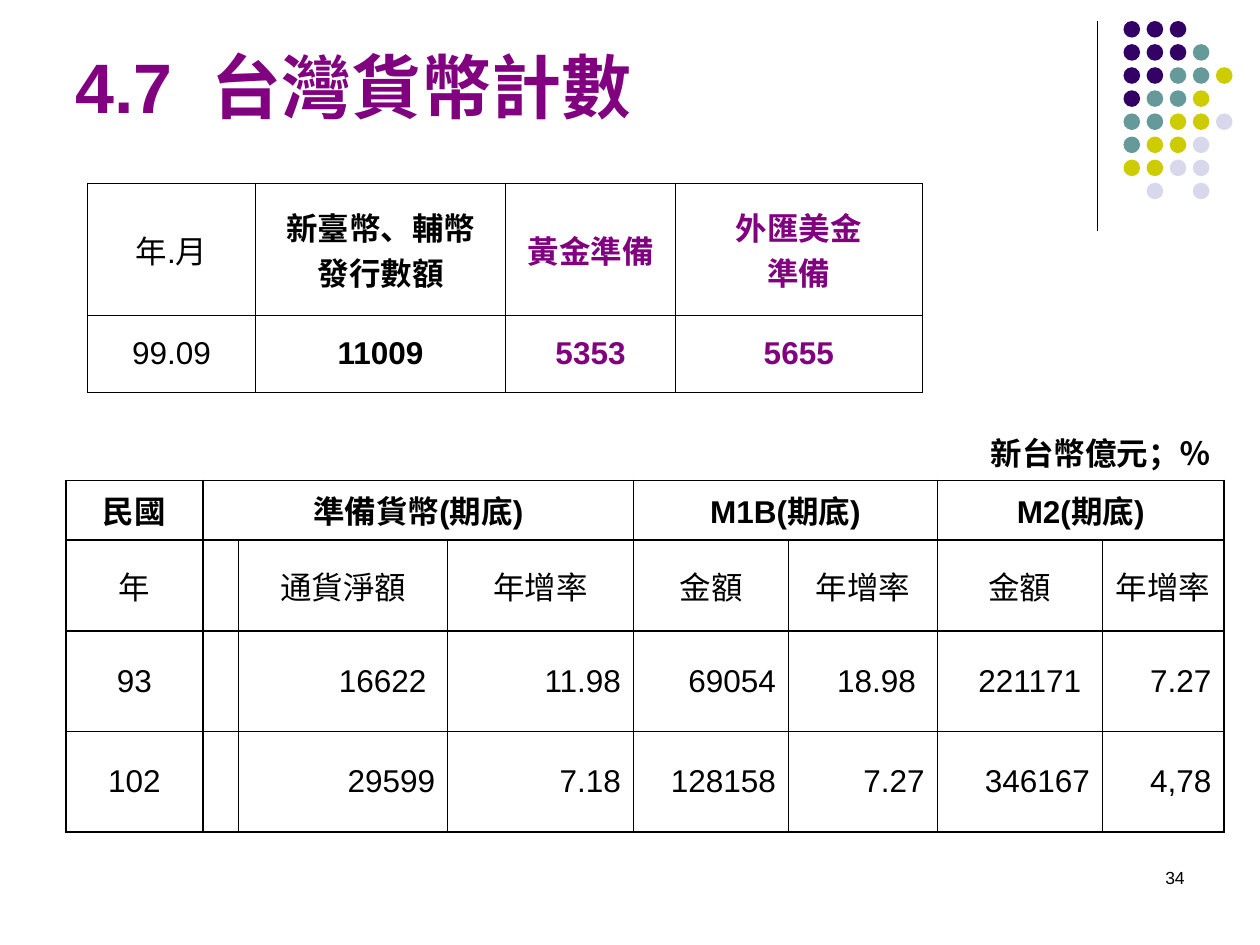
from dataclasses import dataclass

from lxml.etree import SubElement
from pptx import Presentation
from pptx.dml.color import RGBColor
from pptx.enum.shapes import MSO_CONNECTOR as Link, MSO_SHAPE as Form
from pptx.enum.text import MSO_ANCHOR as Anchor, MSO_AUTO_SIZE as Fit, PP_ALIGN as Align
from pptx.oxml.ns import qn
from pptx.util import Pt

BLACK = RGBColor(0x00, 0x00, 0x00)
PURPLE = RGBColor(0x80, 0x00, 0x80)
INDIGO = RGBColor(0x33, 0x00, 0x66)
TEAL = RGBColor(0x66, 0x99, 0x99)
LIME = RGBColor(0xCC, 0xCC, 0x00)
LILAC = RGBColor(0xD8, 0xD8, 0xEC)

FONT = "Arial"
SIDES = ("L", "R", "T", "B")
HUES = {"i": INDIGO, "t": TEAL, "l": LIME, "p": LILAC}
DOTS = ("iii", "iiit", "iittl", "ittl", "ttllp", "tllp", "llpp", " p p")


@dataclass
class Style:
    size: float = 18
    color: RGBColor = BLACK
    bold: bool = False
    align: Align = Align.CENTER
    hang: float = 0


@dataclass
class Grid:
    left: float
    top: float
    cols: tuple[float, ...]
    rows: tuple[float, ...]
    texts: tuple[tuple[str, ...], ...]
    line: float
    spans: tuple[tuple[int, int, int], ...] = ()  # row, first column, last column


def write(frame, text: str, style: Style) -> None:
    frame.text = text
    for para in frame.paragraphs:
        para.alignment = style.align
        if style.hang:
            props = para._p.get_or_add_pPr()
            props.set("marL", str(Pt(style.hang)))
            props.set("indent", str(-Pt(style.hang)))
        for run in para.runs:
            font = run.font
            font.name, font.size, font.bold = FONT, Pt(style.size), style.bold
            font.color.rgb = style.color


def border(cell, width: float, shown: str) -> None:
    props = cell._tc.get_or_add_tcPr()
    for side in SIDES:
        line = SubElement(props, qn(f"a:ln{side}"), w=str(Pt(width)))
        if side in shown:
            fill = SubElement(line, qn("a:solidFill"))
            SubElement(fill, qn("a:srgbClr"), val=str(BLACK))
        else:
            SubElement(line, qn("a:noFill"))


def draw_grid(slide, grid: Grid, style_of, sides_of) -> None:
    table = slide.shapes.add_table(
        len(grid.rows), len(grid.cols), Pt(grid.left), Pt(grid.top),
        Pt(sum(grid.cols)), Pt(sum(grid.rows))).table
    table.first_row = table.horz_banding = False
    for col, width in zip(table.columns, grid.cols):
        col.width = Pt(width)
    for row, height in zip(table.rows, grid.rows):
        row.height = Pt(height)
    for r, texts in enumerate(grid.texts):
        for c, text in enumerate(texts):
            cell = table.cell(r, c)
            cell.vertical_anchor = Anchor.MIDDLE
            border(cell, grid.line, sides_of(r))
            cell.fill.background()
            if text:
                write(cell.text_frame, text, style_of(r, c))
    for r, first, last in grid.spans:
        table.cell(r, first).merge(table.cell(r, last))


def draw_dots(slide, left: float, top: float, size: float, step: float) -> None:
    for r, row in enumerate(DOTS):
        for c, key in enumerate(row):
            if key == " ":
                continue
            dot = slide.shapes.add_shape(
                Form.OVAL, Pt(left + c * step), Pt(top + r * step), Pt(size), Pt(size))
            dot.shadow.inherit = False
            dot.fill.solid()
            dot.fill.fore_color.rgb = HUES[key]
            dot.line.fill.background()


def reserve_style(r: int, c: int) -> Style:
    return Style(color=PURPLE if c > 1 else BLACK, bold=c > 0)


def supply_style(r: int, c: int) -> Style:
    right = r == 0 or (r > 2 and c > 0)
    return Style(bold=r < 2, align=Align.RIGHT if right else Align.CENTER, hang=27)


RESERVE = Grid(
    50, 104.7, (96, 143, 97, 141), (75.6, 44),
    (("年.月", "新臺幣、輔幣\n發行數額", "黃金準備", "外匯美金\n準備"),
     ("99.09", "11009", "5353", "5655")), 0.75)

SUPPLY = Grid(
    37.6, 241.2, (78.4, 20.3, 119.6, 106.2, 88.6, 85, 94.4, 69.4),
    (33, 34, 52, 57.6, 57.4),
    (("新台幣億元；％",) + ("",) * 7,
     ("民國", "準備貨幣(期底)", "", "", "M1B(期底)", "", "M2(期底)", ""),
     ("年", "", "通貨淨額") + ("年增率", "金額") * 2 + ("年增率",),
     ("93", "", "16622 ", "11.98", "69054", "18.98 ", "221171 ", "7.27"),
     ("102", "", "29599", "7.18", "128158", "7.27", "346167", "4,78")),
    1, ((0, 0, 7), (1, 1, 3), (1, 4, 5), (1, 6, 7)))


def main() -> None:
    deck = Presentation()
    deck.slide_width, deck.slide_height = Pt(720), Pt(540)
    slide = deck.slides.add_slide(deck.slide_layouts[5])

    # Corner ornament
    rule = slide.shapes.add_connector(Link.STRAIGHT, Pt(627), Pt(12), Pt(627), Pt(132))
    rule.line.color.rgb = BLACK
    rule.line.width = Pt(0.75)
    SubElement(rule._element.spPr, qn("a:effectLst"))
    draw_dots(slide, 642, 12, 9.5, 13.2)

    # Title
    title = slide.shapes.title
    title.left, title.top, title.width, title.height = Pt(36), Pt(9.4), Pt(583), Pt(67)
    frame = title.text_frame
    frame.auto_size = Fit.NONE
    frame.vertical_anchor = Anchor.BOTTOM
    write(frame, "4.7  台灣貨幣計數", Style(40, PURPLE, True, Align.LEFT))

    # Tables
    draw_grid(slide, SUPPLY, supply_style, lambda r: "LRTB" if r else "B")
    draw_grid(slide, RESERVE, reserve_style, lambda r: "LRTB")

    # Page number
    page = slide.shapes.add_textbox(Pt(516), Pt(492), Pt(168), Pt(36)).text_frame
    page.word_wrap = True
    write(page, "34", Style(10, align=Align.RIGHT))

    deck.save("out.pptx")


if __name__ == "__main__":
    main()
